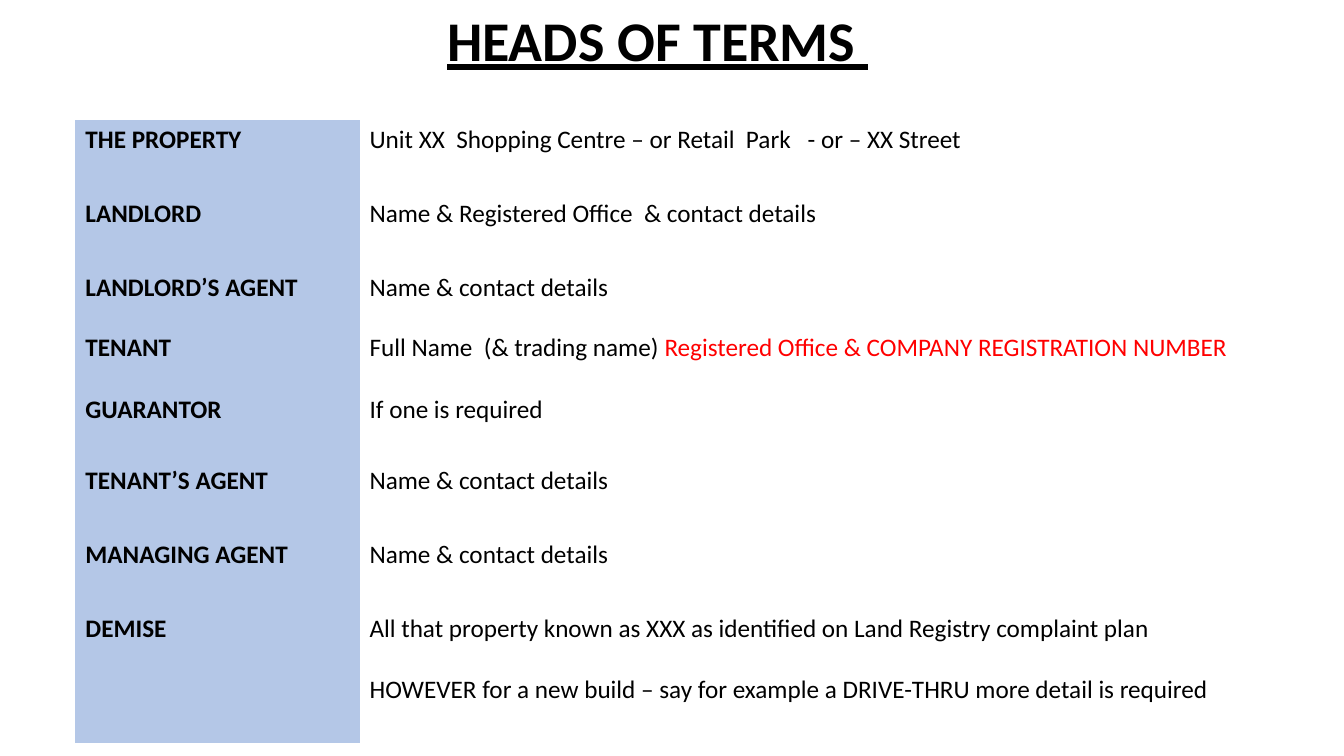
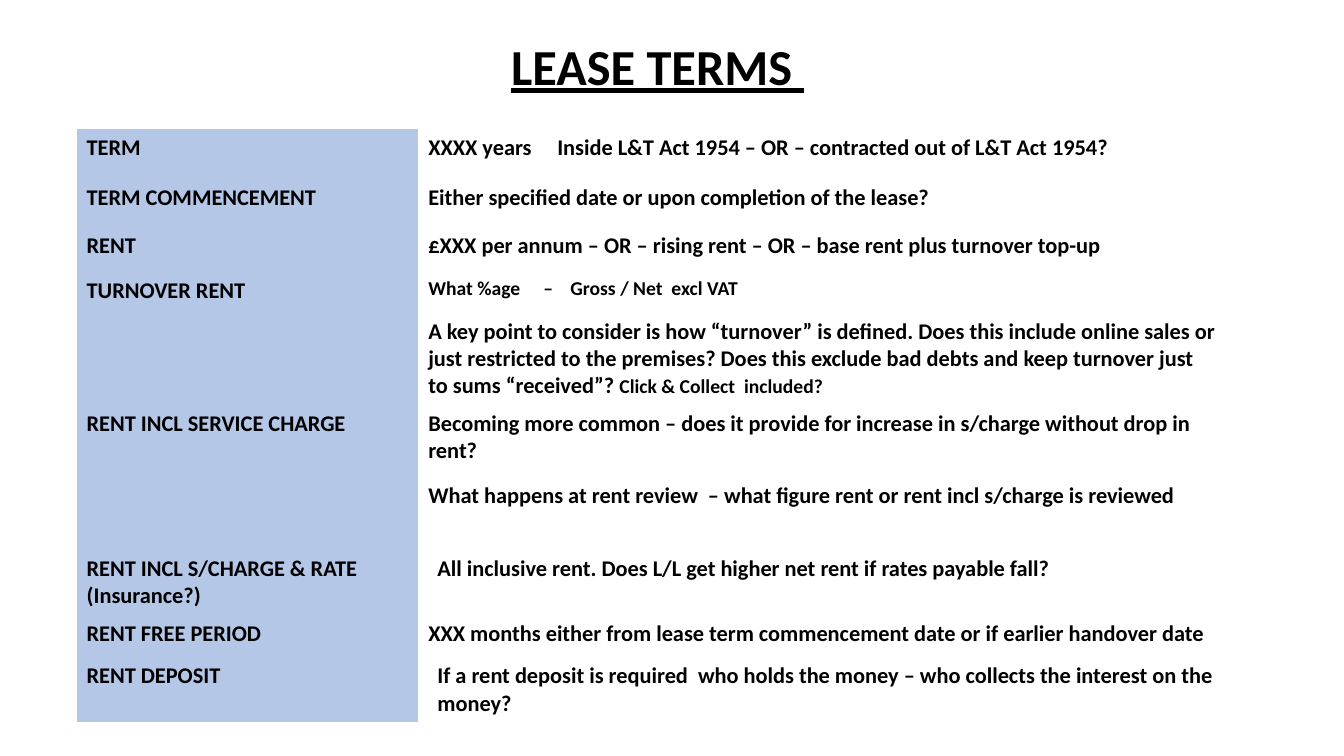
from dataclasses import dataclass

from lxml.etree import SubElement
from pptx import Presentation
from pptx.dml.color import RGBColor
from pptx.enum.text import MSO_ANCHOR as Anchor, PP_ALIGN as Align
from pptx.oxml.ns import qn
from pptx.util import Cm, Pt

FONT = "Calibri"
BLACK, RED, LABEL_FILL = "000000", "FF0000", "B4C7E7"
NO_STYLE_NO_GRID = "{2D5ABB26-0587-4C30-8999-92F81FD0307C}"


@dataclass
class Run:
    text: str
    size: int = 0  # 0 takes the size of the table
    color: str = BLACK


@dataclass
class Para:
    runs: list
    tabs: tuple = ()
    indent: float = 0


@dataclass
class Terms:
    """A two-column table: each row is (height, labels, details)."""
    left: float
    top: float
    widths: tuple
    rows: list
    size: int
    gap: int  # points between paragraphs of a cell
    bold_details: bool


def rgb(hex_color):
    return RGBColor.from_string(hex_color)


def add_run(p, text, size, bold, color=BLACK, underline=False):
    r = p.add_run()
    r.text = text
    font = r.font
    font.name, font.size, font.bold = FONT, Pt(size), bold
    font.underline = underline
    font.color.rgb = rgb(color)


def add_title(s, text, top, size):
    tf = s.shapes.add_textbox(Cm(3.78), Cm(top), Cm(25.58), Cm(2.18)).text_frame
    tf.word_wrap = True
    tf.vertical_anchor = Anchor.MIDDLE
    p = tf.paragraphs[0]
    p.alignment, p.line_spacing = Align.CENTER, 0.9
    add_run(p, text, size, True, underline=True)


def set_layout(p, para):
    """Apply the left indent and tab stops of a paragraph."""
    pPr = p._p.get_or_add_pPr()
    if para.indent:
        pPr.set("marL", str(Cm(para.indent)))
        pPr.set("indent", "0")
    if para.tabs:
        tab_list = SubElement(pPr, qn("a:tabLst"))
        for pos in para.tabs:
            SubElement(tab_list, qn("a:tab"), pos=str(Cm(pos)), algn="l")


def fill_cell(cell, paras, size, gap, bold):
    tf = cell.text_frame
    for i, para in enumerate(paras):
        para = Para([Run(para)]) if isinstance(para, str) else para
        p = tf.add_paragraph() if i else tf.paragraphs[0]
        if i:
            p.space_before = Pt(gap)
        set_layout(p, para)
        for run in para.runs:
            add_run(p, run.text, run.size or size, bold, run.color)


def add_terms(s, terms):
    heights = [row[0] for row in terms.rows]
    frame = s.shapes.add_table(len(heights), 2, Cm(terms.left), Cm(terms.top),
                               Cm(sum(terms.widths)), Cm(sum(heights)))
    table = frame.table
    table.first_row = table.horz_banding = False
    table._tbl.tblPr.find(qn("a:tableStyleId")).text = NO_STYLE_NO_GRID
    for column, width in zip(table.columns, terms.widths):
        column.width = Cm(width)
    for row, (height, labels, details) in zip(table.rows, terms.rows):
        row.height = Cm(height)
        label, detail = row.cells
        label.fill.solid()
        label.fill.fore_color.rgb = rgb(LABEL_FILL)
        detail.fill.background()
        fill_cell(label, labels, terms.size, terms.gap, True)
        fill_cell(detail, details, terms.size, terms.gap, terms.bold_details)


CONTACT = "Name & contact details"

HEADS_OF_TERMS = Terms(
    left=1.9, top=3.02, widths=(7.16, 23.11), size=18, gap=22, bold_details=False,
    rows=[
        (1.86, ["THE PROPERTY"],
         [Para([Run("Unit XX  Shopping Centre – or Retail  Park\t- or – XX Street")],
               tabs=(11.04,))]),
        (1.86, ["LANDLORD"], ["Name & Registered Office  & contact details"]),
        (1.52, ["LANDLORD’S AGENT"], [CONTACT]),
        (3.35, ["TENANT", "GUARANTOR"],
         [Para([Run("Full Name  (& trading name) "),
                Run("Registered Office & COMPANY REGISTRATION NUMBER", color=RED)]),
          "If one is required"]),
        (1.86, ["TENANT’S AGENT"], [CONTACT]),
        (1.86, ["MANAGING AGENT"], [CONTACT]),
        (1.54, ["DEMISE"],
         ["All that property known as XXX as identified on Land Registry complaint plan"]),
        (1.86, [],
         ["HOWEVER for a new build – say for example a DRIVE-THRU more detail is required"]),
    ])

LEASE_TERMS = Terms(
    left=1.93, top=3.25, widths=(8.61, 20.37), size=16, gap=12, bold_details=True,
    rows=[
        (1.27, ["TERM"],
         [Para([Run("XXXX years\tInside L&T Act 1954 – OR – contracted out of L&T Act 1954?")],
               tabs=(3.25,))]),
        (1.2, ["TERM COMMENCEMENT"],
         ["Either specified date or upon completion of the lease?"]),
        (1.14, ["RENT"],
         ["£XXX per annum – OR – rising rent – OR – base rent plus turnover top-up"]),
        (3.35, ["TURNOVER RENT"],
         [Para([Run("What %age\t–\tGross / Net  excl VAT", 14)], tabs=(2.9, 3.58)),
          Para([Run("A key point to consider is how “turnover” is defined. Does this "
                    "include online sales or just restricted to the premises? Does this "
                    "exclude bad debts and keep turnover just to sums “received”? "),
                Run("Click & Collect  included?", 14)])]),
        (3.65, ["RENT INCL SERVICE CHARGE"],
         ["Becoming more common – does it provide for increase in s/charge without "
          "drop in rent?",
          "What happens at rent review  – what figure rent or rent incl s/charge is reviewed"]),
        (1.63, ["RENT INCL S/CHARGE & RATE (Insurance?)"],
         [Para([Run("All inclusive rent. Does L/L get higher net rent if rates payable fall?")],
               indent=0.23)]),
        (1.08, ["RENT FREE PERIOD"],
         ["XXX months either from lease term commencement date or if earlier handover date"]),
        (1.63, ["RENT DEPOSIT"],
         [Para([Run("If a rent deposit is required  who holds the money – who collects "
                    "the interest on the money?")], indent=0.23)]),
    ])


def main():
    prs = Presentation()
    prs.slide_width, prs.slide_height = Cm(33.87), Cm(19.05)
    for title, top, size, terms in (
            ("HEADS OF TERMS ", 0, 40, HEADS_OF_TERMS),
            ("LEASE TERMS ", 0.66, 36, LEASE_TERMS)):
        s = prs.slides.add_slide(prs.slide_layouts[6])
        add_title(s, title, top, size)
        add_terms(s, terms)
    prs.save("out.pptx")


if __name__ == "__main__":
    main()
